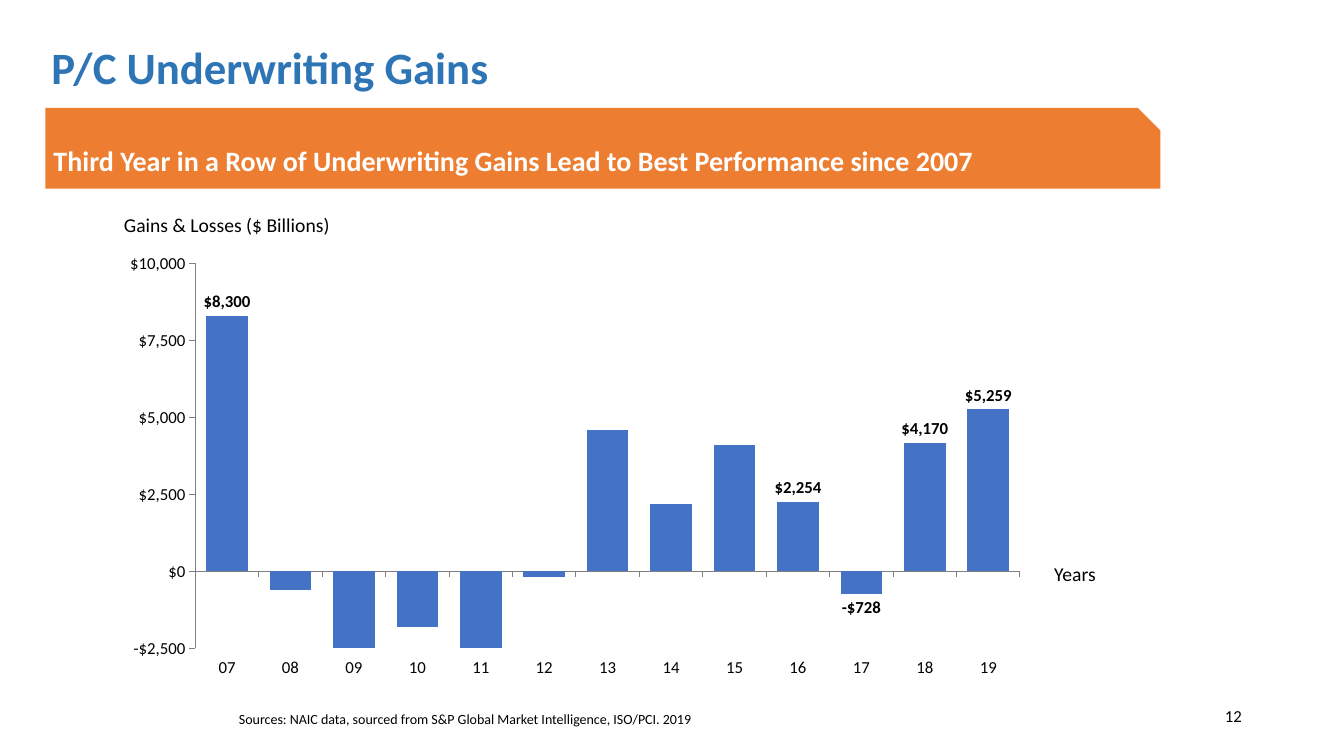
from lxml import etree
from pptx import Presentation
from pptx.chart.data import CategoryChartData
from pptx.dml.color import RGBColor
from pptx.enum.chart import XL_CHART_TYPE, XL_LABEL_POSITION, XL_TICK_LABEL_POSITION, XL_TICK_MARK
from pptx.enum.shapes import MSO_SHAPE
from pptx.enum.text import MSO_ANCHOR, MSO_AUTO_SIZE, PP_ALIGN
from pptx.oxml.ns import qn
from pptx.util import Inches, Pt

COLUMN = XL_CHART_TYPE.COLUMN_CLUSTERED
OUTSIDE_END = XL_LABEL_POSITION.OUTSIDE_END
LOW = XL_TICK_LABEL_POSITION.LOW
TICK_OUT, TICK_NONE = XL_TICK_MARK.OUTSIDE, XL_TICK_MARK.NONE
SNIPPED = MSO_SHAPE.SNIP_1_RECTANGLE
MIDDLE, BOTTOM, TOP = MSO_ANCHOR.MIDDLE, MSO_ANCHOR.BOTTOM, MSO_ANCHOR.TOP
LEFT, RIGHT = PP_ALIGN.LEFT, PP_ALIGN.RIGHT
NO_FIT = MSO_AUTO_SIZE.NONE

FONT = "Calibri"
COLORS = {"title": "2E75B6", "banner": "ED7D31", "bar": "4472C4",
          "text": "000000", "white": "FFFFFF", "axis": "808080"}
TITLE = "P/C Underwriting Gains"
BANNER = "Third Year in a Row of Underwriting Gains Lead to Best Performance since 2007"
VALUE_HEADING = "Gains & Losses ($ Billions)"
YEAR_HEADING = "Years"
SOURCES = "Sources: NAIC data, sourced from S&P Global Market Intelligence, ISO/PCI. 2019"
PAGE_NUMBER = "12"
GAINS = {"07": 8300, "08": -600, "09": -2900, "10": -1800, "11": -4500,
         "12": -200, "13": 4600, "14": 2200, "15": 4100, "16": 2254,
         "17": -728, "18": 4170, "19": 5259}
LABELLED_YEARS = ("07", "16", "17", "18", "19")
DOLLARS = '"$"#,##0'
PLOT_SHARES = {"x": 0.094, "y": 0.069, "w": 0.896, "h": 0.746}

GRID = 100
PLACES = {
    "title": (3.08, 4.53, 92.48, 9.33),
    "banner": (3.38, 14.27, 82.96, 10.67),
    "chart": (8.1, 30.13, 68.48, 68.27),
    "value heading": (8.48, 27.87, 21.15, 4.13),
    "year heading": (77.7, 74, 8.63, 4.13),
    "sources": (17.03, 90.27, 69.38, 6),
    "page number": (70.65, 92.67, 22.5, 5.33),
}

deck = Presentation()
deck.slide_width, deck.slide_height = Inches(13.33), Inches(7.5)
slide = deck.slides.add_slide(deck.slide_layouts[1])


def color(name):
    return RGBColor.from_string(COLORS[name])


def place(name):
    left, top, width, height = PLACES[name]
    across, down = deck.slide_width / GRID, deck.slide_height / GRID
    return int(left * across), int(top * down), int(width * across), int(height * down)


def move(shape, name):
    shape.left, shape.top, shape.width, shape.height = place(name)
    return shape


def write(shape, text, size=14, tint="text", bold=False, anchor=MIDDLE,
          align=LEFT, spacing=0.9, insets=(0.1, 0.05, 0.1, 0.05)):
    frame = shape.text_frame
    frame.word_wrap = True
    frame.auto_size = NO_FIT
    frame.vertical_anchor = anchor
    (frame.margin_left, frame.margin_top,
     frame.margin_right, frame.margin_bottom) = map(Inches, insets)
    para = frame.paragraphs[0]
    para.alignment = align
    para.line_spacing = spacing
    para.space_before = Pt(0)
    span = para.add_run()
    span.text = text
    style(span.font, size, tint, bold)
    return para


def style(font, size, tint="text", bold=False):
    font.name, font.size, font.bold = FONT, Pt(size), bold
    font.color.rgb = color(tint)


def add_child(parent, tag, value):
    etree.SubElement(parent, qn(tag)).set("val", str(value))


def set_plot_layout(chart):
    area = chart._chartSpace.find(".//" + qn("c:plotArea"))
    for old in area.findall(qn("c:layout")):
        area.remove(old)
    layout = etree.Element(qn("c:layout"))
    manual = etree.SubElement(layout, qn("c:manualLayout"))
    add_child(manual, "c:layoutTarget", "inner")
    for side in "xy":
        add_child(manual, f"c:{side}Mode", "edge")
    for side, share in PLOT_SHARES.items():
        add_child(manual, f"c:{side}", share)
    area.insert(0, layout)


def hide_labels(labels):
    hidden = [i for i, year in enumerate(GAINS) if year not in LABELLED_YEARS]
    for position, index in enumerate(hidden):
        label = etree.Element(qn("c:dLbl"))
        add_child(label, "c:idx", index)
        add_child(label, "c:delete", 1)
        labels._element.insert(position, label)


def add_gains_chart():
    data = CategoryChartData()
    data.categories = list(GAINS)
    data.add_series("Series 1", list(GAINS.values()))
    chart = slide.shapes.add_chart(COLUMN, *place("chart"), data).chart
    chart.has_title = chart.has_legend = False
    style(chart.font, 18)
    set_plot_layout(chart)

    years, dollars = chart.category_axis, chart.value_axis
    for axis in (years, dollars):
        axis.has_major_gridlines = False
        axis.major_tick_mark, axis.minor_tick_mark = TICK_OUT, TICK_NONE
        axis.format.line.color.rgb = color("axis")
        axis.format.line.width = Pt(0.75)
        style(axis.tick_labels.font, 12)
    years.tick_label_position = LOW
    dollars.minimum_scale, dollars.maximum_scale = -2500, 10000
    dollars.major_unit = 2500
    dollars.tick_labels.number_format = DOLLARS
    dollars.tick_labels.number_format_is_linked = False

    plot = chart.plots[0]
    plot.gap_width = 52
    plot.vary_by_categories = False
    bars = plot.series[0]
    bars.invert_if_negative = False
    bars.format.fill.solid()
    bars.format.fill.fore_color.rgb = color("bar")
    labels = bars.data_labels
    labels.show_value = True
    labels.position = OUTSIDE_END
    labels.number_format = DOLLARS
    labels.number_format_is_linked = False
    style(labels.font, 12, bold=True)
    hide_labels(labels)


def add_banner():
    banner = slide.shapes.add_shape(SNIPPED, *place("banner"))
    banner.adjustments[0] = 0.28
    banner.shadow.inherit = False
    banner.fill.solid()
    banner.fill.fore_color.rgb = color("banner")
    banner.line.fill.background()
    write(banner, BANNER, size=20, tint="white", bold=True, spacing=1,
          insets=(0.08, 0.13, 0, 0))


def add_sources():
    body = move(slide.placeholders[1], "sources")
    para = write(body, SOURCES, size=10, anchor=BOTTOM, insets=(0.1, 0, 0.1, 0))
    properties = para._p.get_or_add_pPr()
    properties.set("marL", "0")
    properties.set("indent", "0")
    etree.SubElement(properties, qn("a:buNone"))


add_gains_chart()
write(move(slide.shapes.title, "title"), TITLE, size=32, tint="title", bold=True)
add_sources()
add_banner()
for name, text, options in (
    ("value heading", VALUE_HEADING, {}),
    ("year heading", YEAR_HEADING, {}),
    ("page number", PAGE_NUMBER, {"size": 12, "anchor": TOP, "align": RIGHT, "spacing": 1}),
):
    write(slide.shapes.add_textbox(*place(name)), text, **options)

deck.save("out.pptx")
